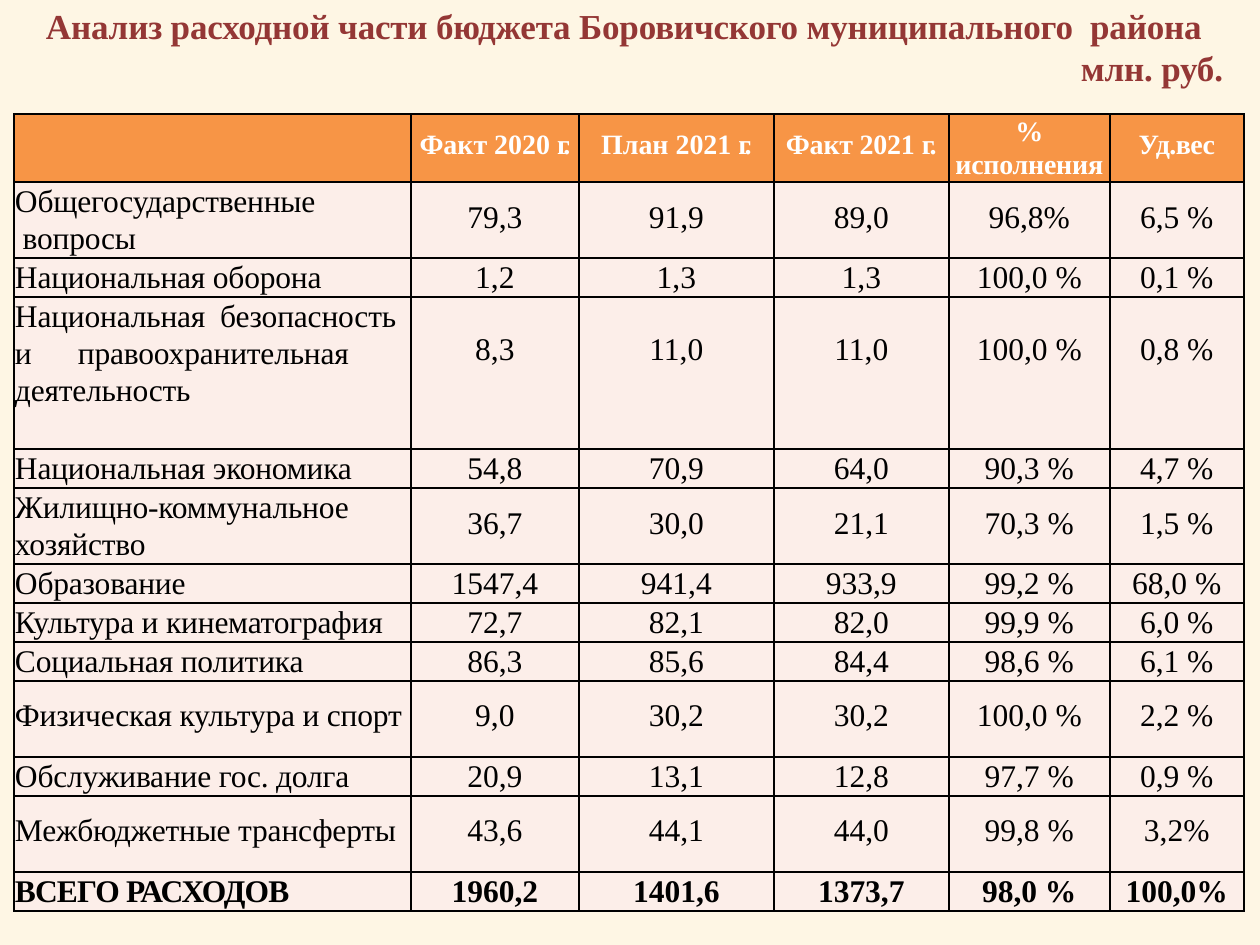
import dataclasses

import lxml.etree
import pptx
import pptx.dml.color
import pptx.enum.text
import pptx.oxml.ns
import pptx.util

ALIGN = pptx.enum.text.PP_ALIGN


@dataclasses.dataclass(frozen=True)
class Theme:
    font: str = "Times New Roman"
    page: str = "FEF6E4"
    title: str = "943735"
    header_fill: str = "F79546"
    header_text: str = "FFFFFF"
    body_fill: str = "FCEEE9"
    body_text: str = "000000"
    border: str = "000000"
    title_size: int = 20
    header_size: int = 16
    body_size: int = 18
    header_line: float = 19
    body_line: float = 21.2
    border_width: int = 1


THEME = Theme()
PX = 914400 // 126

TITLE = [("Анализ расходной части бюджета ", -0.1), ("Боровичского муниципального", -0.1),
         (" ", 5), ("района", -0.1)]
UNIT = [("млн. руб.", -0.1)]
HEADERS = [
    [],
    [[("Факт 2020 ", 0), ("г.", -1.9)]],
    [[("План 2021 ", 0), ("г.", -1.9)]],
    [[("Факт 2021 ", -0.1), ("г.", -0.9)]],
    [[("%", 0)], [("исполнения", -0.1)]],
    [[("Уд.вес", -0.3)]],
]
EXPENSES = [
    (["Общегосударственные  вопросы"], "79,3", "91,9", "89,0", "96,8%", "6,5 %"),
    (["Национальная оборона"], "1,2", "1,3", "1,3", "100,0 %", "0,1 %"),
    (["Национальная безопасность  и\tправоохранительная  деятельность"],
     "8,3", "11,0", "11,0", "100,0 %", "0,8 %"),
    (["Национальная экономика"], "54,8", "70,9", "64,0", "90,3 %", "4,7 %"),
    (["Жилищно-коммунальное", "хозяйство"], "36,7", "30,0", "21,1", "70,3 %", "1,5 %"),
    (["Образование"], "1547,4", "941,4", "933,9", "99,2 %", "68,0 %"),
    (["Культура и кинематография"], "72,7", "82,1", "82,0", "99,9 %", "6,0 %"),
    (["Социальная политика"], "86,3", "85,6", "84,4", "98,6 %", "6,1 %"),
    (["Физическая культура и спорт"], "9,0", "30,2", "30,2", "100,0 %", "2,2 %"),
    (["Обслуживание гос. долга"], "20,9", "13,1", "12,8", "97,7 %", "0,9 %"),
    (["Межбюджетные трансферты"], "43,6", "44,1", "44,0", "99,8 %", "3,2%"),
    (["ВСЕГО РАСХОДОВ"], "1960,2", "1401,6", "1373,7", "98,0 %", "100,0%"),
]
COLUMN_WIDTHS = [397, 168, 195, 175, 161, 134]
SINGLE, DOUBLE, SECURITY, HEADER = 39, 76, 152, 68
ROW_HEIGHTS = [HEADER, DOUBLE, SINGLE, SECURITY, SINGLE, DOUBLE, SINGLE, SINGLE, SINGLE,
               DOUBLE, SINGLE, DOUBLE, SINGLE]
TOP_INSETS = {SINGLE: 0, DOUBLE: 18, SECURITY: 35}
CENTERED_LABELS = ("Физическая", "Межбюджетные")


def px(length):
    return pptx.util.Emu(length * PX)


def rgb(value):
    return pptx.dml.color.RGBColor.from_string(value)


def write(paragraph, runs, size, color, bold, align=ALIGN.LEFT, line=None):
    paragraph.alignment = align
    if line:
        paragraph.line_spacing = pptx.util.Pt(line)
    font = paragraph.font
    font.name, font.size, font.bold = THEME.font, pptx.util.Pt(size), bold
    font.color.rgb = rgb(color)
    for text, spacing in runs:
        run = paragraph.add_run()
        run.text = text
        if spacing:
            run._r.get_or_add_rPr().set("spc", str(round(spacing * 100)))


def set_margins(frame, left=0, top=0):
    frame.margin_left, frame.margin_top = px(left), px(top)
    frame.margin_right = frame.margin_bottom = 0


def add_borders(cell):
    properties = cell._tc.get_or_add_tcPr()
    for index, side in enumerate(("lnL", "lnR", "lnT", "lnB")):
        edge = lxml.etree.Element(pptx.oxml.ns.qn("a:" + side),
                                  w=str(pptx.util.Pt(THEME.border_width)))
        fill = lxml.etree.SubElement(edge, pptx.oxml.ns.qn("a:solidFill"))
        lxml.etree.SubElement(fill, pptx.oxml.ns.qn("a:srgbClr"), val=THEME.border)
        properties.insert(index, edge)


def fill_cell(cell, lines, fill, top=0, left=0, **style):
    set_margins(cell, left, top)
    cell.fill.solid()
    cell.fill.fore_color.rgb = rgb(fill)
    add_borders(cell)
    frame = cell.text_frame
    for index, runs in enumerate(lines):
        paragraph = frame.add_paragraph() if index else frame.paragraphs[0]
        write(paragraph, runs, **style)


def add_title(slide):
    frame = slide.shapes.add_textbox(px(45), px(4), px(1178), px(88)).text_frame
    frame.word_wrap = True
    set_margins(frame, 1, 1)
    style = dict(size=THEME.title_size, color=THEME.title, bold=True)
    write(frame.paragraphs[0], TITLE, **style)
    frame.paragraphs[0].space_before = pptx.util.Pt(1)
    write(frame.add_paragraph(), UNIT, align=ALIGN.RIGHT, **style)


def add_expenses(slide):
    table = slide.shapes.add_table(len(ROW_HEIGHTS), len(COLUMN_WIDTHS), px(14), px(114),
                                   px(sum(COLUMN_WIDTHS)), px(sum(ROW_HEIGHTS))).table
    table.first_row = table.horz_banding = False
    for column, width in zip(table.columns, COLUMN_WIDTHS):
        column.width = px(width)
    for row, height in zip(table.rows, ROW_HEIGHTS):
        row.height = px(height)

    for cell, lines in zip(table.rows[0].cells, HEADERS):
        several = len(lines) > 1
        fill_cell(cell, lines, THEME.header_fill, top=0 if several else 16,
                  size=THEME.header_size, color=THEME.header_text, bold=True,
                  align=ALIGN.CENTER, line=THEME.header_line if several else None)

    for number, (label, *values) in enumerate(EXPENSES, 1):
        height = ROW_HEIGHTS[number]
        total = number == len(EXPENSES)
        style = dict(fill=THEME.body_fill, size=THEME.body_size, color=THEME.body_text, bold=total)
        centered = label[0].startswith(CENTERED_LABELS)
        label_cell, *value_cells = table.rows[number].cells
        fill_cell(label_cell, [[(text, -0.5 if total else -0.1)] for text in label],
                  top=TOP_INSETS[height] if centered else 0, left=1,
                  align=ALIGN.JUSTIFY if height == SECURITY else ALIGN.LEFT,
                  line=None if centered else THEME.body_line, **style)
        for cell, value in zip(value_cells, values):
            fill_cell(cell, [[(value, 0)]], top=TOP_INSETS[height], align=ALIGN.CENTER,
                      line=THEME.body_line if height == SINGLE else None, **style)

    general = table.cell(1, 0).text_frame.paragraphs[0]
    general._p.get_or_add_pPr().set("marR", str(px(95)))


def main():
    deck = pptx.Presentation()
    deck.slide_width, deck.slide_height = px(1260), px(945)
    slide = deck.slides.add_slide(deck.slide_layouts[6])
    slide.background.fill.solid()
    slide.background.fill.fore_color.rgb = rgb(THEME.page)
    add_title(slide)
    add_expenses(slide)
    deck.save("out.pptx")


if __name__ == "__main__":
    main()
